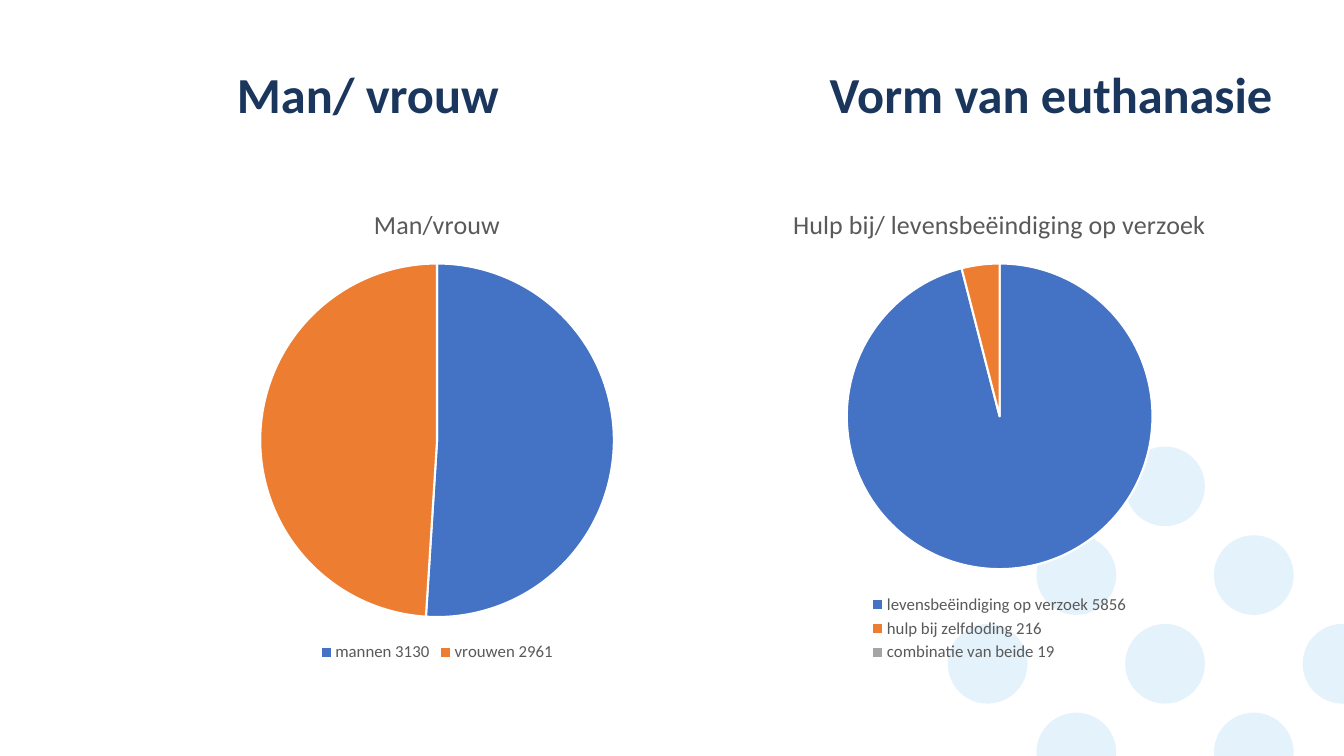
import pptx
import pptx.chart.data
import pptx.dml.color
import pptx.enum.chart
import pptx.enum.shapes
import pptx.oxml
import pptx.oxml.ns
import pptx.util
from lxml import etree

RGBColor = pptx.dml.color.RGBColor
Inches = pptx.util.Inches
Pt = pptx.util.Pt
qn = pptx.oxml.ns.qn

NAVY = RGBColor(0x1A, 0x36, 0x5D)
GREY_TEXT = RGBColor(0x59, 0x59, 0x59)
PALE_BLUE = RGBColor(0xA8, 0xD5, 0xF4)
WHITE = RGBColor(0xFF, 0xFF, 0xFF)
SLICES = [RGBColor(0x44, 0x72, 0xC4), RGBColor(0xED, 0x7D, 0x31),
          RGBColor(0xA5, 0xA5, 0xA5)]
FONT = "Calibri"

LEFT = 1.67
COLUMN, GUTTER = 5.33, 0.25
HEADING_TOP, HEADING_H = 0.69, 1.16
CHART_TOP, CHART_H = HEADING_TOP + HEADING_H, 4.76
DOT, DOT_PITCH = 0.79, 0.88
DOTS_LEFT, DOTS_TOP = 9.4, 4.43


def column_left(col):
    return LEFT + col * (COLUMN + GUTTER)


def style_font(font, size, color, bold=False):
    font.name = FONT
    font.size = Pt(size)
    font.bold = bold
    font.color.rgb = color


def add_dot(slide, col, row):
    sp = slide.shapes.add_shape(
        pptx.enum.shapes.MSO_SHAPE.OVAL,
        Inches(DOTS_LEFT + col * DOT_PITCH), Inches(DOTS_TOP + row * DOT_PITCH),
        Inches(DOT), Inches(DOT))
    sp.shadow.inherit = False
    sp.line.fill.background()
    sp.fill.solid()
    sp.fill.fore_color.rgb = PALE_BLUE
    color = sp.element.spPr.find(".//" + qn("a:srgbClr"))
    etree.SubElement(color, qn("a:alpha"), val="30000")


def add_dot_pattern(slide):
    """Checkerboard of dots that widens downwards from its middle column."""
    for row in range(4):
        for col in range(5):
            if (col + row) % 2 == 0 and abs(col - 2) <= row:
                add_dot(slide, col, row)


def add_heading(slide, col, indent, text):
    box = slide.shapes.add_textbox(
        Inches(column_left(col) + indent), Inches(HEADING_TOP),
        Inches(COLUMN - indent + GUTTER), Inches(HEADING_H))
    tf = box.text_frame
    tf.word_wrap = True
    tf.margin_left = tf.margin_right = tf.margin_top = tf.margin_bottom = 0
    p = tf.paragraphs[0]
    p.text = text
    p.line_spacing = 0.9
    style_font(p.runs[0].font, 36, NAVY, bold=True)


def add_pie(slide, col, title, shares):
    data = pptx.chart.data.CategoryChartData()
    data.categories = list(shares)
    data.add_series("Series 1", list(shares.values()))
    chart = slide.shapes.add_chart(
        pptx.enum.chart.XL_CHART_TYPE.PIE,
        Inches(column_left(col)), Inches(CHART_TOP),
        Inches(COLUMN), Inches(CHART_H), data).chart
    chart.font.name = FONT
    chart.font.size = Pt(10)

    chart.has_title = True
    tf = chart.chart_title.text_frame
    tf.text = title
    style_font(tf.paragraphs[0].runs[0].font, 18.6, GREY_TEXT)
    chart.chart_title.include_in_layout = False

    chart.has_legend = True
    chart.legend.position = pptx.enum.chart.XL_LEGEND_POSITION.BOTTOM
    chart.legend.include_in_layout = False
    style_font(chart.legend.font, 12, GREY_TEXT)

    plot = chart.plots[0]
    plot.vary_by_categories = True
    for i, color in enumerate(SLICES[:len(shares)]):
        fmt = plot.series[0].points[i].format
        fmt.fill.solid()
        fmt.fill.fore_color.rgb = color
        fmt.line.color.rgb = WHITE
        fmt.line.width = Pt(1.5)


def main():
    prs = pptx.Presentation()
    prs.slide_width, prs.slide_height = Inches(13.33), Inches(7.5)
    slide = prs.slides.add_slide(prs.slide_layouts[6])
    add_dot_pattern(slide)
    add_pie(slide, 1, "Hulp bij/ levensbeëindiging op verzoek", {
        "levensbeëindiging op verzoek 5856": 96,
        "hulp bij zelfdoding 216": 4,
        "combinatie van beide 19": 0,
    })
    add_heading(slide, 0, 0.68, "Man/ vrouw")
    add_heading(slide, 1, 0.98, "Vorm van euthanasie")
    add_pie(slide, 0, "Man/vrouw", {"mannen 3130": 51, "vrouwen 2961": 49})
    prs.save("out.pptx")


if __name__ == "__main__":
    main()
